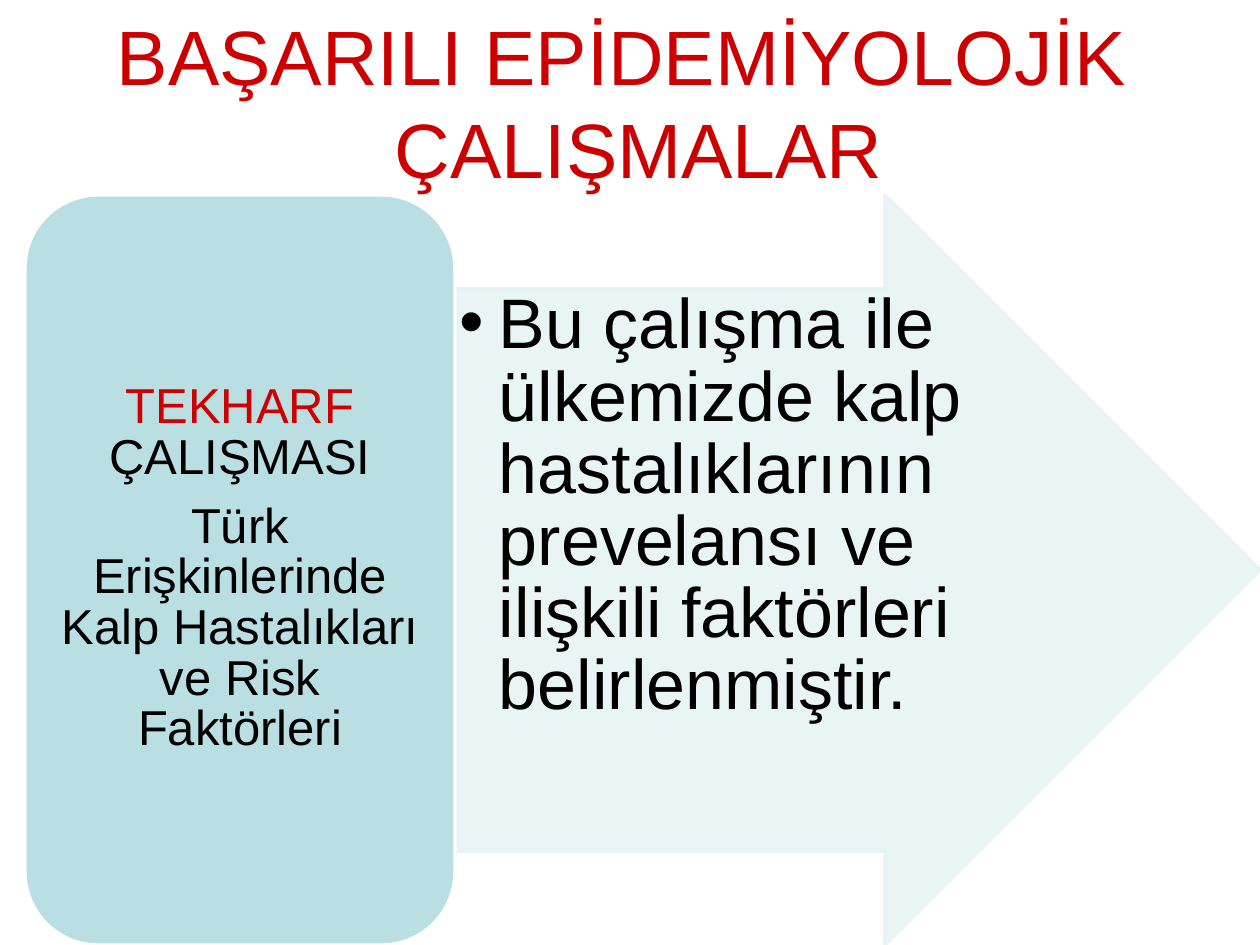
import pptx
import pptx.util
import pptx.dml.color
import pptx.enum.shapes
import pptx.enum.text
import pptx.oxml
import pptx.oxml.ns
from lxml import etree

PX = 914400 // 126
RED = "CC0000"
BLACK = "000000"
SHAPES = pptx.enum.shapes.MSO_SHAPE
ALIGN = pptx.enum.text.PP_ALIGN


def px(length):
    return pptx.util.Emu(length * PX)


def color(hex_value):
    return pptx.dml.color.RGBColor.from_string(hex_value)


def add_drawing_child(parent, tag, **attributes):
    return etree.SubElement(parent, pptx.oxml.ns.qn(tag), **attributes)


def add_panel(slide, kind, box, adjustments, fill, line):
    panel = slide.shapes.add_shape(kind, *map(px, box))
    panel.shadow.inherit = False
    for index, value in enumerate(adjustments):
        panel.adjustments[index] = value
    panel.fill.solid()
    panel.fill.fore_color.rgb = color(fill)
    panel.line.color.rgb = color(line)
    panel.line.width = pptx.util.Pt(1.92)
    return panel


def add_text_frame(slide, box, top_inset):
    frame = slide.shapes.add_textbox(*map(px, box)).text_frame
    frame.word_wrap = True
    frame.margin_left = frame.margin_right = frame.margin_bottom = 0
    frame.margin_top = px(top_inset)
    return frame


def write(paragraph, runs, size, align=ALIGN.LEFT, spacing=None):
    paragraph.alignment = align
    if spacing is not None:
        paragraph.line_spacing = spacing
    for words, hex_value in runs:
        run = paragraph.add_run()
        run.text = words
        run.font.name = "Arial"
        run.font.size = pptx.util.Pt(size)
        run.font.color.rgb = color(hex_value)


def hang(paragraph, margin, indent):
    properties = paragraph._p.get_or_add_pPr()
    properties.set("marL", str(px(margin)))
    properties.set("indent", str(px(indent)))
    return properties


def add_heading(slide, left, top, width, height):
    heading = add_text_frame(slide, (left, top, width, height), 1).paragraphs[0]
    hang(heading, 279, -278)
    write(heading, [("BAŞARILI EPİDEMİYOLOJİK ÇALIŞMALAR", RED)], 44)


def add_finding_arrow(slide, left, top, width, height):
    arrow = add_panel(slide, SHAPES.RIGHT_ARROW, (left, top, width, height),
                      (0.75, 0.5), "E7F3F4", "E7F3F4")
    fill_color = arrow.fill._xPr.find(".//" + pptx.oxml.ns.qn("a:srgbClr"))
    add_drawing_child(fill_color, "a:alpha", val="90000")
    finding = add_text_frame(slide, (left + 2, top + 82, 507, 450), 14).paragraphs[0]
    properties = hang(finding, 42, -39)
    add_drawing_child(properties, "a:buFont", typeface="Arial")
    add_drawing_child(properties, "a:buChar", char="•")
    write(finding, [("Bu çalışma ile ülkemizde kalp hastalıklarının prevelansı ve "
                     "ilişkili faktörleri belirlenmiştir.", BLACK)], 40, spacing=0.86)


def add_study_card(slide, left, top, width, height):
    add_panel(slide, SHAPES.ROUNDED_RECTANGLE, (left, top, width, height),
              (0.17,), "BADFE2", "FFFFFF")
    frame = add_text_frame(slide, (left + 34, top + 177, 362, 387), 10)
    study = frame.paragraphs[0]
    write(study, [("TEKHARF ", RED), ("ÇALIŞMASI", BLACK)], 28,
          ALIGN.CENTER, pptx.util.Pt(29.1))
    full_name = frame.add_paragraph()
    full_name.space_before = pptx.util.Pt(10.8)
    write(full_name, [("Türk Erişkinlerinde Kalp Hastalıkları ve Risk Faktörleri", BLACK)],
          28, ALIGN.CENTER, 0.86)


def main():
    deck = pptx.Presentation()
    deck.slide_width, deck.slide_height = px(1260), px(945)
    slide = deck.slides.add_slide(deck.slide_layouts[6])
    add_heading(slide, 116, 8, 1029, 188)
    add_finding_arrow(slide, 455, 195, 805, 750)
    add_study_card(slide, 25, 195, 430, 750)
    deck.save("out.pptx")


if __name__ == "__main__":
    main()
